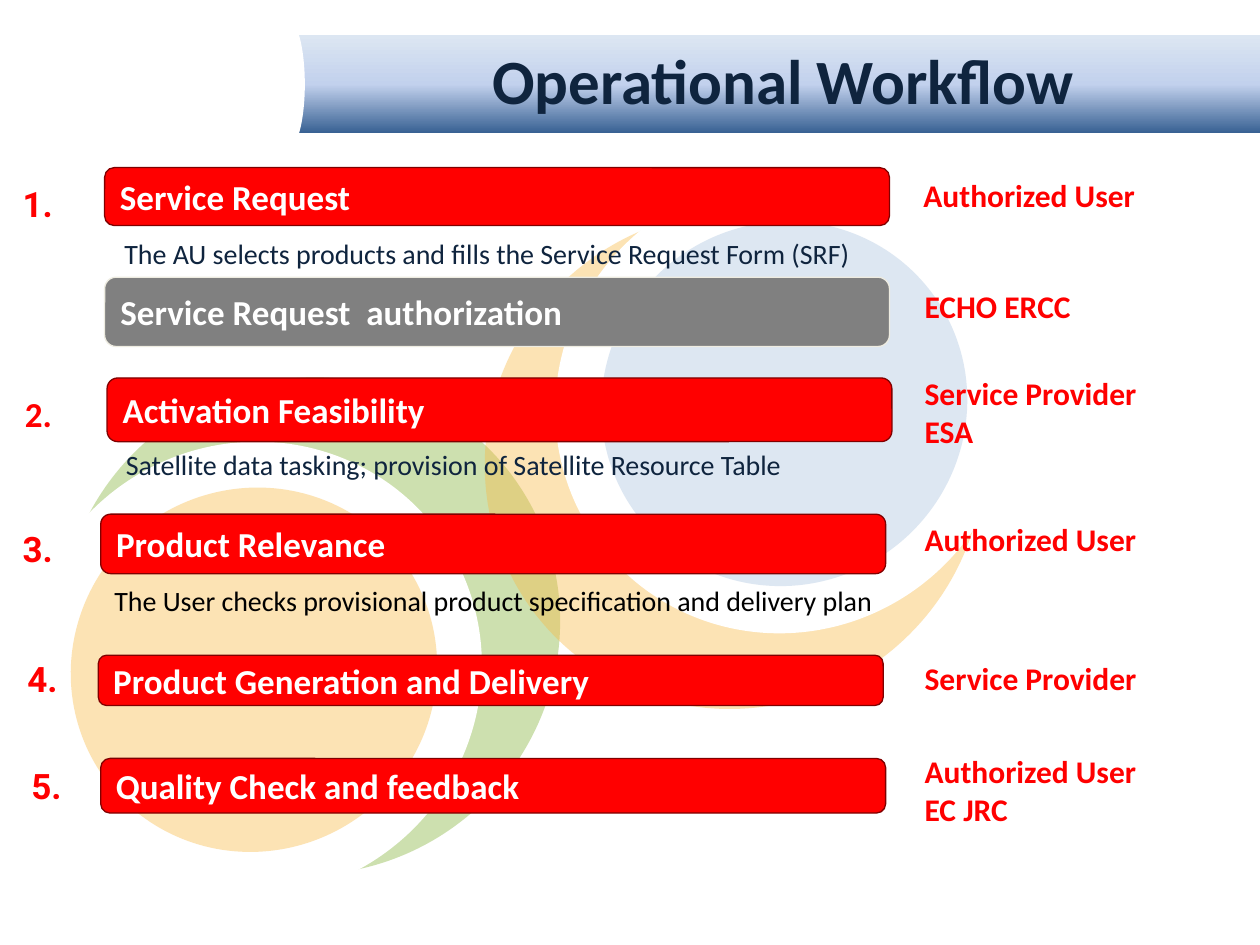
from copy import deepcopy
from dataclasses import dataclass

from lxml import etree
from pptx import Presentation
from pptx.dml.color import RGBColor
from pptx.enum.shapes import MSO_SHAPE
from pptx.enum.text import MSO_ANCHOR, MSO_AUTO_SIZE, PP_ALIGN
from pptx.oxml.ns import qn
from pptx.util import Pt

RECTANGLE, ELLIPSE = MSO_SHAPE.RECTANGLE, MSO_SHAPE.OVAL
ROUNDED = MSO_SHAPE.ROUNDED_RECTANGLE
MIDDLE, TOP = MSO_ANCHOR.MIDDLE, MSO_ANCHOR.TOP
LEFT, CENTER = PP_ALIGN.LEFT, PP_ALIGN.CENTER
GROW = MSO_AUTO_SIZE.SHAPE_TO_FIT_TEXT


@dataclass(frozen=True)
class Theme:
    body_font: str = "Calibri"
    number_font: str = "Roboto"
    title_size: float = 36
    step_size: float = 20
    owner_size: float = 18
    note_size: float = 16
    white: str = "FFFFFF"
    black: str = "000000"
    navy: str = "0F243E"
    red: str = "FF0000"
    red_line: str = "800000"
    gray: str = "808080"
    gray_line: str = "EEECE1"
    green: str = "84B238"
    orange: str = "F9B945"
    blue: str = "ABC3DF"
    banner: tuple = ((0, "376092"), (0.5, "C2D1ED"), (1, "DCE6F2"))


THEME = Theme()


@dataclass(frozen=True)
class Box:
    left: float
    top: float
    width: float
    height: float

    def lengths(self) -> list:
        return [Pt(v) for v in (self.left, self.top, self.width, self.height)]


@dataclass(frozen=True)
class Disc:
    box: Box
    rotation: float
    color: str
    alpha: int = 100


@dataclass(frozen=True)
class Label:
    box: Box
    text: str
    color: str


@dataclass(frozen=True)
class Step:
    title: str
    left: float
    top: float
    height: float
    fill: str = THEME.red
    line: str = THEME.red_line


@dataclass(frozen=True)
class Number:
    text: str
    left: float
    top: float
    font: str = THEME.number_font


STEP_WIDTH = 448.5
GREEN_TURN, ORANGE_TURN = 142.6, 319.6

# White discs cut the coloured ones into crescents
DISCS = [
    Disc(Box(33.1, 216.7, 288, 282.2), GREEN_TURN, THEME.green, 40),
    Disc(Box(275.8, 121.7, 288, 282.2), ORANGE_TURN, THEME.orange, 40),
    Disc(Box(316.1, 102.2, 264.2, 258.5), ORANGE_TURN, THEME.white),
    Disc(Box(342.7, 127.4, 211, 206.6), ORANGE_TURN, THEME.blue, 40),
    Disc(Box(12.2, 253.4, 264.2, 258.5), GREEN_TURN, THEME.white),
    Disc(Box(39.6, 279.4, 211, 206.6), GREEN_TURN, THEME.orange, 40),
]
STEPS = [
    Step("Service Request", 59.8, 95.8, 33.1),
    Step("Service Request  authorization", 59.8, 158.4, 39.6,
         THEME.gray, THEME.gray_line),
    Step("Activation Feasibility", 61.2, 216, 36.4),
    Step("Product Relevance", 57.6, 293.8, 34),
    Step("Product Generation and Delivery", 56.2, 374.4, 28.8),
    Step("Quality Check and feedback", 57.6, 433.4, 31.2),
]
NUMBERS = [
    Number("1.", 5.8, 100.8),
    Number("2.", 7.2, 221, THEME.body_font),
    Number("3.", 5.8, 298),
    Number("4.", 8.6, 372.2),
    Number("5.", 10.8, 433.4),
]
NOTES = [
    Label(Box(64, 131.8, 434.9, 26.6),
          "The AU selects products and fills the Service Request Form (SRF)", THEME.navy),
    Label(Box(64.8, 252, 393.8, 26.6),
          "Satellite data tasking; provision of Satellite Resource Table", THEME.navy),
    Label(Box(58.3, 329.8, 450.7, 26.6),
          "The User checks provisional product specification and delivery plan", THEME.black),
]
OWNERS = [
    Label(Box(520.6, 97.2, 187.2, 28.8), "Authorized User", THEME.red),
    Label(Box(521.3, 160.6, 187.2, 28.8), "ECHO ERCC", THEME.red),
    Label(Box(521.3, 210.2, 187.2, 51.1), "Service Provider\nESA", THEME.red),
    Label(Box(521.3, 293.8, 187.2, 28.8), "Authorized User", THEME.red),
    Label(Box(521.3, 373, 187.2, 28.8), "Service Provider", THEME.red),
    Label(Box(521.3, 426.2, 162.7, 51.1), "Authorized User\nEC JRC", THEME.red),
]


def apply(target, values: dict) -> None:
    for name, value in values.items():
        setattr(target, name, value)


def write(shape, text: str, size: float, color: str, font: str = THEME.body_font,
          bold: bool = True, align=LEFT, **frame_format) -> None:
    frame = shape.text_frame
    frame.text = text
    apply(frame, {"word_wrap": True, **frame_format})
    for paragraph in frame.paragraphs:
        paragraph.alignment = align
        apply(paragraph.font, {"name": font, "size": Pt(size), "bold": bold})
        paragraph.font.color.rgb = RGBColor.from_string(color)


def add_shape(slide, kind, box: Box, fill: str = "", line: str = ""):
    shape = slide.shapes.add_shape(kind, *box.lengths())
    shape.shadow.inherit = False
    if fill:
        shape.fill.solid()
        shape.fill.fore_color.rgb = RGBColor.from_string(fill)
    if line:
        shape.line.color.rgb = RGBColor.from_string(line)
        shape.line.width = Pt(0.75)
    else:
        shape.line.fill.background()
    return shape


def add_banner(slide) -> None:
    banner = add_shape(slide, RECTANGLE, Box(165, 20.2, 555, 56))
    banner.fill.gradient()
    banner.fill.gradient_angle = 90
    stop_list = banner.element.spPr.find(".//" + qn("a:gsLst"))
    stop_list.append(deepcopy(stop_list[0]))
    for stop, (position, color) in zip(banner.fill.gradient_stops, THEME.banner):
        stop.position = position
        stop.color.rgb = RGBColor.from_string(color)
    add_shape(slide, ELLIPSE, Box(156.2, 12.2, 18, 72), THEME.white)


def add_disc(slide, disc: Disc) -> None:
    shape = add_shape(slide, ELLIPSE, disc.box, disc.color)
    shape.rotation = disc.rotation
    if disc.alpha < 100:
        color = shape.element.spPr.find(".//" + qn("a:srgbClr"))
        etree.SubElement(color, qn("a:alpha"), val=str(disc.alpha * 1000))


def add_step(slide, step: Step) -> None:
    box = Box(step.left, step.top, STEP_WIDTH, step.height)
    shape = add_shape(slide, ROUNDED, box, step.fill, step.line)
    write(shape, step.title, THEME.step_size, THEME.white, vertical_anchor=MIDDLE)


def add_text(slide, box: Box, text: str, size: float, color: str, **text_format) -> None:
    shape = slide.shapes.add_textbox(*box.lengths())
    write(shape, text, size, color, **{"vertical_anchor": TOP, **text_format})


def main() -> None:
    presentation = Presentation()
    presentation.slide_width, presentation.slide_height = Pt(720), Pt(540)
    slide = presentation.slides.add_slide(presentation.slide_layouts[6])

    # Backdrop
    add_banner(slide)
    for disc in DISCS:
        add_disc(slide, disc)

    # Workflow
    for step in STEPS:
        add_step(slide, step)
    for number in NUMBERS:
        add_text(slide, Box(number.left, number.top, 33.8, 31), number.text,
                 THEME.step_size, THEME.red, font=number.font, auto_size=GROW)
    for note in NOTES:
        add_text(slide, note.box, note.text, THEME.note_size, note.color,
                 bold=False, word_wrap=False, auto_size=GROW)
    for owner in OWNERS:
        add_text(slide, owner.box, owner.text, THEME.owner_size, owner.color, auto_size=GROW)

    # Title
    add_text(slide, Box(162, 23.8, 571, 43.2), "Operational Workflow",
             THEME.title_size, THEME.navy, align=CENTER, vertical_anchor=MIDDLE)

    presentation.save("out.pptx")


if __name__ == "__main__":
    main()
